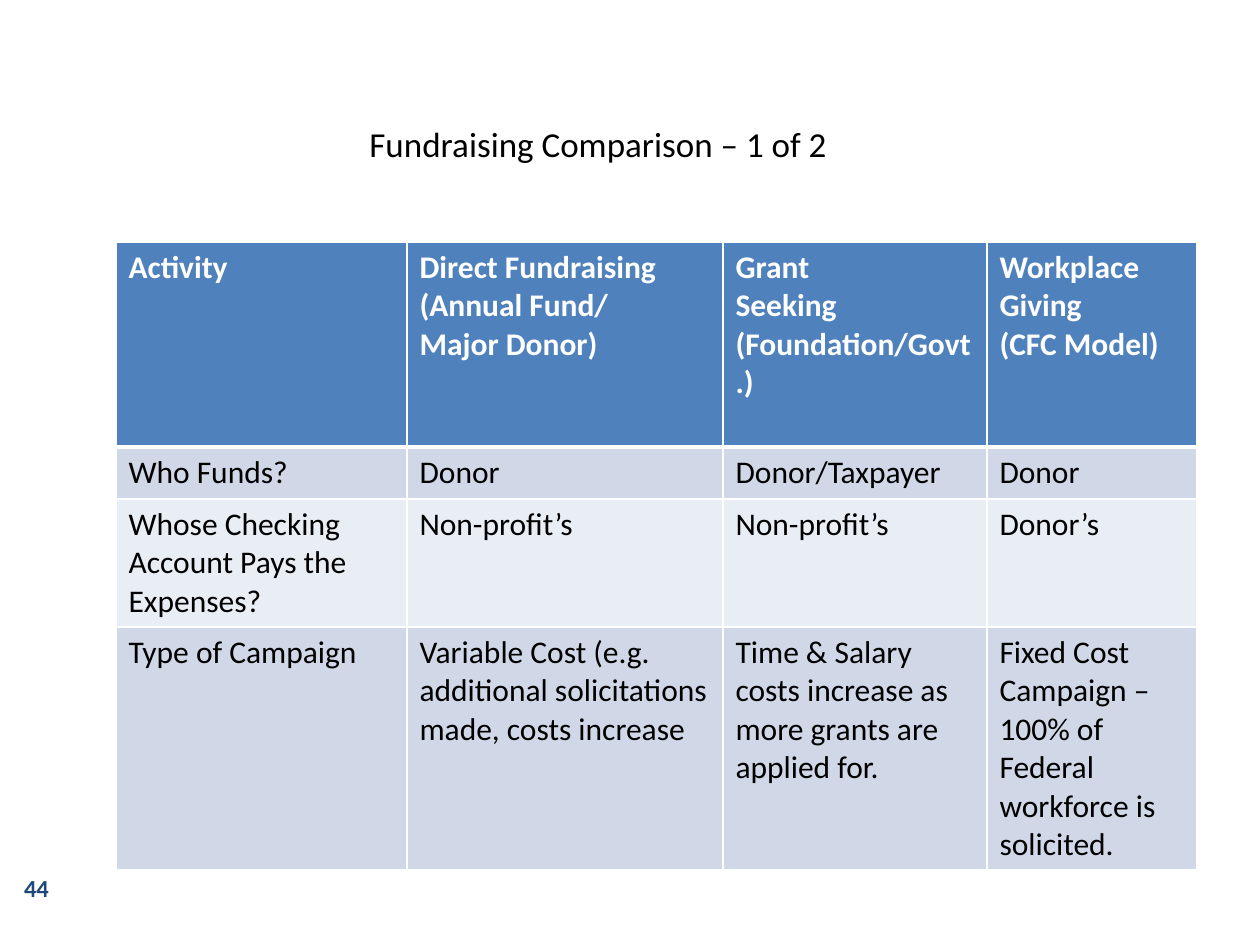
from lxml import etree
from pptx import Presentation
from pptx.dml.color import RGBColor
from pptx.enum.text import MSO_ANCHOR, PP_ALIGN
from pptx.oxml.ns import qn
from pptx.util import Emu, Pt

PX = 914400 // 126
FONT = "Calibri"
LEFT, CENTER = PP_ALIGN.LEFT, PP_ALIGN.CENTER
TOP, MIDDLE = MSO_ANCHOR.TOP, MSO_ANCHOR.MIDDLE
COLORS = {
    "header": "4F81BD",
    "odd_row": "D0D8E8",
    "even_row": "E9EDF4",
    "white": "FFFFFF",
    "black": "000000",
    "navy": "1F497D",
}
COLUMN_WIDTHS = [291, 316, 264, 210]
ROW_HEIGHTS = [205, 52, 128, 242]
ROWS = [
    ["Activity", "Direct Fundraising\n(Annual Fund/\nMajor Donor)",
     "Grant\nSeeking (Foundation/Govt.)", "Workplace Giving\n(CFC Model)"],
    ["Who Funds?", "Donor", "Donor/Taxpayer", "Donor"],
    ["Whose Checking Account Pays the Expenses?",
     "Non-profit’s", "Non-profit’s", "Donor’s"],
    ["Type of Campaign",
     "Variable Cost (e.g. additional solicitations made, costs increase",
     "Time & Salary costs increase as more grants are applied for.",
     "Fixed Cost Campaign – 100% of Federal workforce is solicited."],
]


def px(length):
    return Emu(length * PX)


def rgb(name):
    return RGBColor.from_string(COLORS[name])


def write_text(frame, text, size=18, color="black", bold=False, align=LEFT):
    """Fill a text frame, one paragraph for each line of text."""
    frame.word_wrap = True
    for index, line in enumerate(text.split("\n")):
        paragraph = frame.add_paragraph() if index else frame.paragraphs[0]
        paragraph.alignment = align
        run = paragraph.add_run()
        run.text = line
        run.font.name = FONT
        run.font.size = Pt(size)
        run.font.bold = bold
        run.font.color.rgb = rgb(color)


def add_label(slide, box, text, anchor=TOP, **text_format):
    shape = slide.shapes.add_textbox(*map(px, box))
    shape.text_frame.vertical_anchor = anchor
    write_text(shape.text_frame, text, **text_format)


def set_borders(cell, top, bottom):
    """Draw white cell borders; top and bottom are widths in points."""
    properties = cell._tc.get_or_add_tcPr()
    for side, width in (("L", 1), ("R", 1), ("T", top), ("B", bottom)):
        line = etree.SubElement(properties, qn(f"a:ln{side}"), w=str(Pt(width)))
        fill = etree.SubElement(line, qn("a:solidFill"))
        etree.SubElement(fill, qn("a:srgbClr"), val=COLORS["white"])


def add_comparison_table(slide, left, top):
    table = slide.shapes.add_table(
        len(ROWS), len(COLUMN_WIDTHS), px(left), px(top),
        px(sum(COLUMN_WIDTHS)), px(sum(ROW_HEIGHTS))).table
    for column, width in zip(table.columns, COLUMN_WIDTHS):
        column.width = px(width)
    for index, (row, height, texts) in enumerate(zip(table.rows, ROW_HEIGHTS, ROWS)):
        row.height = px(height)
        is_header = index == 0
        fill = "header" if is_header else "odd_row" if index % 2 else "even_row"
        for cell, text in zip(row.cells, texts):
            set_borders(cell, top=3 if index == 1 else 1, bottom=3 if is_header else 1)
            cell.fill.solid()
            cell.fill.fore_color.rgb = rgb(fill)
            write_text(cell.text_frame, text, bold=is_header,
                       color="white" if is_header else "black")


def main():
    presentation = Presentation()
    presentation.slide_width, presentation.slide_height = px(1260), px(945)
    slide = presentation.slides.add_slide(presentation.slide_layouts[6])
    add_comparison_table(slide, 116, 242)
    add_label(slide, (357, 116, 536, 55), "Fundraising Comparison – 1 of 2", size=20)
    add_label(slide, (0, 861, 73, 53), "44", anchor=MIDDLE, size=14,
              color="navy", bold=True, align=CENTER)
    presentation.save("out.pptx")


if __name__ == "__main__":
    main()
